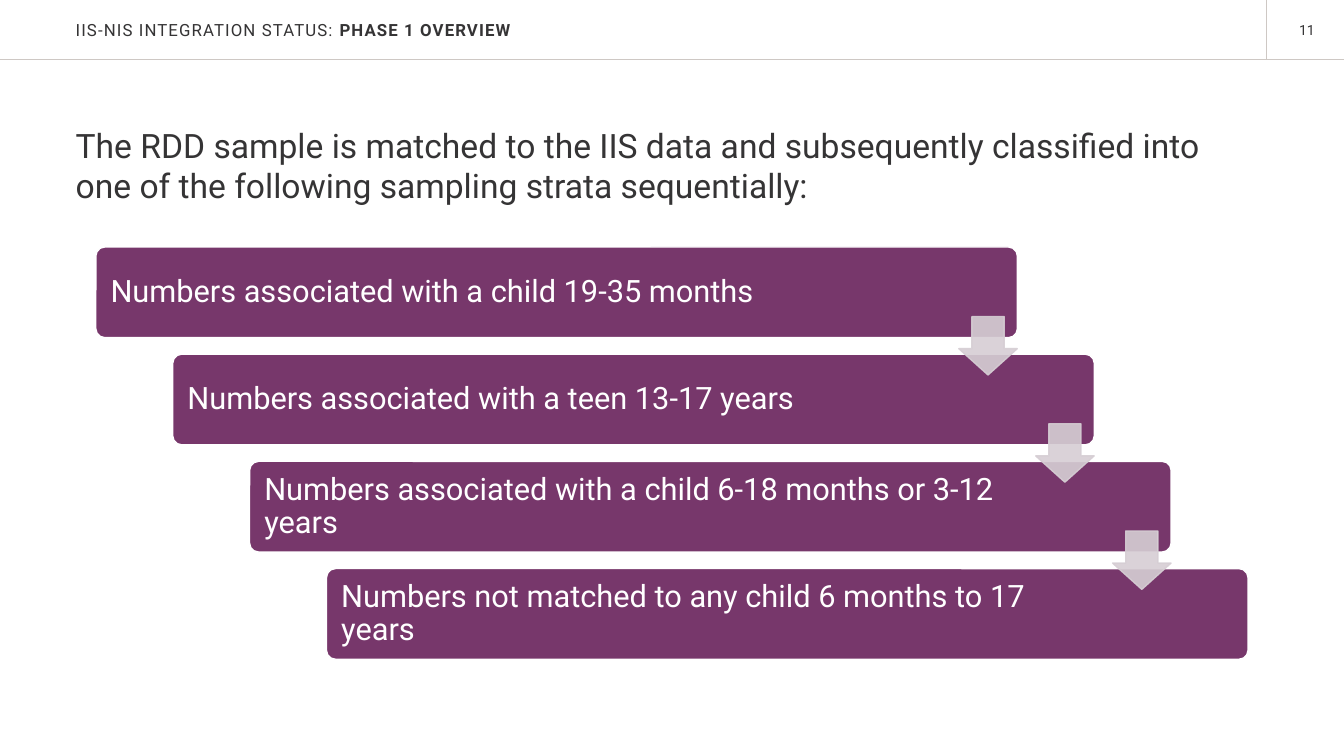
from lxml.etree import SubElement
from pptx import Presentation
from pptx.dml.color import RGBColor
from pptx.enum.shapes import MSO_CONNECTOR, MSO_SHAPE
from pptx.enum.text import MSO_ANCHOR, PP_ALIGN
from pptx.oxml.ns import qn
from pptx.util import Inches, Pt

INK, RULE, PLUM, MIST, WHITE = "353435", "CEC8C4", "77376B", "D6CED4", "FFFFFF"

STRATA = [
    "Numbers associated with a child 19-35 months",
    "Numbers associated with a teen 13-17 years",
    "Numbers associated with a child 6-18 months or 3-12 years",
    "Numbers not matched to any child 6 months to 17 years",
]


def colour(hex_value):
    return RGBColor.from_string(hex_value)


class Deck:
    """Holds the style and current slide; lengths are percents of slide width and height."""

    font = "Roboto"

    def __init__(self):
        self.presentation = Presentation()
        self.presentation.slide_width = Inches(13.33)
        self.presentation.slide_height = Inches(7.5)
        self.slide = self.presentation.slides.add_slide(self.presentation.slide_layouts[6])

    def across(self, share):
        return round(self.presentation.slide_width * share / 100)

    def down(self, share):
        return round(self.presentation.slide_height * share / 100)

    def box(self, left, top, width, height):
        return self.across(left), self.down(top), self.across(width), self.down(height)

    def fill_frame(self, frame, text, size, ink, insets=(0, 0, 0, 0), anchor=MSO_ANCHOR.TOP,
                   bold_text="", spacing=0):
        """Fill a frame with one paragraph; insets are left, top, right, bottom."""
        left, top, right, bottom = insets
        frame.margin_left, frame.margin_right = self.across(left), self.across(right)
        frame.margin_top, frame.margin_bottom = self.down(top), self.down(bottom)
        frame.word_wrap = True
        frame.vertical_anchor = anchor
        frame.text = text
        paragraph = frame.paragraphs[0]
        paragraph.alignment = PP_ALIGN.LEFT
        if bold_text:
            emphasis = paragraph.add_run()
            emphasis.text = bold_text
            emphasis.font.bold = True
        for run in paragraph.runs:
            run.font.name = self.font
            run.font.size = Pt(size)
            run.font.color.rgb = colour(ink)
            if spacing:
                run.font._element.set("spc", str(round(spacing * 100)))
        return paragraph

    def text(self, place, text, size, **style):
        textbox = self.slide.shapes.add_textbox(*self.box(*place))
        return self.fill_frame(textbox.text_frame, text, size, INK, **style)

    def line(self, x1, y1, x2, y2):
        rule = self.slide.shapes.add_connector(
            MSO_CONNECTOR.STRAIGHT, self.across(x1), self.down(y1), self.across(x2), self.down(y2))
        rule.line.color.rgb = colour(RULE)
        rule.line.width = Pt(0.65)
        SubElement(rule._element.spPr, qn("a:effectLst"))

    def shape(self, kind, place, fill, outline, adjustments):
        shape = self.slide.shapes.add_shape(kind, *self.box(*place))
        shape.shadow.inherit = False
        shape.fill.solid()
        shape.fill.fore_color.rgb = colour(fill)
        shape.line.color.rgb = colour(outline)
        shape.line.width = Pt(1)
        for index, value in enumerate(adjustments):
            shape.adjustments[index] = value
        return shape

    def bar(self, place, label):
        bar = self.shape(MSO_SHAPE.ROUNDED_RECTANGLE, place, PLUM, WHITE, [0.1])
        paragraph = self.fill_frame(bar.text_frame, label, 22, WHITE,
                                    insets=(0.9, 1.6, 10.95, 1.6), anchor=MSO_ANCHOR.MIDDLE)
        paragraph.line_spacing = 0.9

    def arrow(self, place):
        arrow = self.shape(MSO_SHAPE.DOWN_ARROW, place, MIST, MIST, [0.55, 0.45])
        for tint in arrow._element.spPr.iter(qn("a:srgbClr")):
            SubElement(tint, qn("a:alpha"), val="90000")


def main():
    deck = Deck()
    page_number = deck.text((94.82, 2.13, 3.75, 3.6), "11", 10, insets=(0.75, 0.67, 0.75, 0.67))
    page_number.alignment = PP_ALIGN.RIGHT
    deck.line(0, 7.87, 100, 7.87)
    deck.line(94.22, 0, 94.22, 7.87)
    deck.text((5.63, 0, 69.77, 8), "IIS-NIS INTEGRATION STATUS: ", 12,
              anchor=MSO_ANCHOR.MIDDLE, bold_text="PHASE 1 OVERVIEW", spacing=0.8)
    deck.text((5.63, 16.53, 86.5, 13.33),
              "The RDD sample is matched to the IIS data and subsequently classified into "
              "one of the following sampling strata sequentially:", 24)

    step_x, step_y = 5.72, 14.18
    for step, stratum in enumerate(STRATA):
        deck.bar((7.13 + step * step_x, 32.67 + step * step_y, 68.57, 12), stratum)
    for step in range(len(STRATA) - 1):
        deck.arrow((71.34 + step * step_x, 41.87 + step * step_y, 4.35, 7.73))

    deck.presentation.save("out.pptx")


if __name__ == "__main__":
    main()
